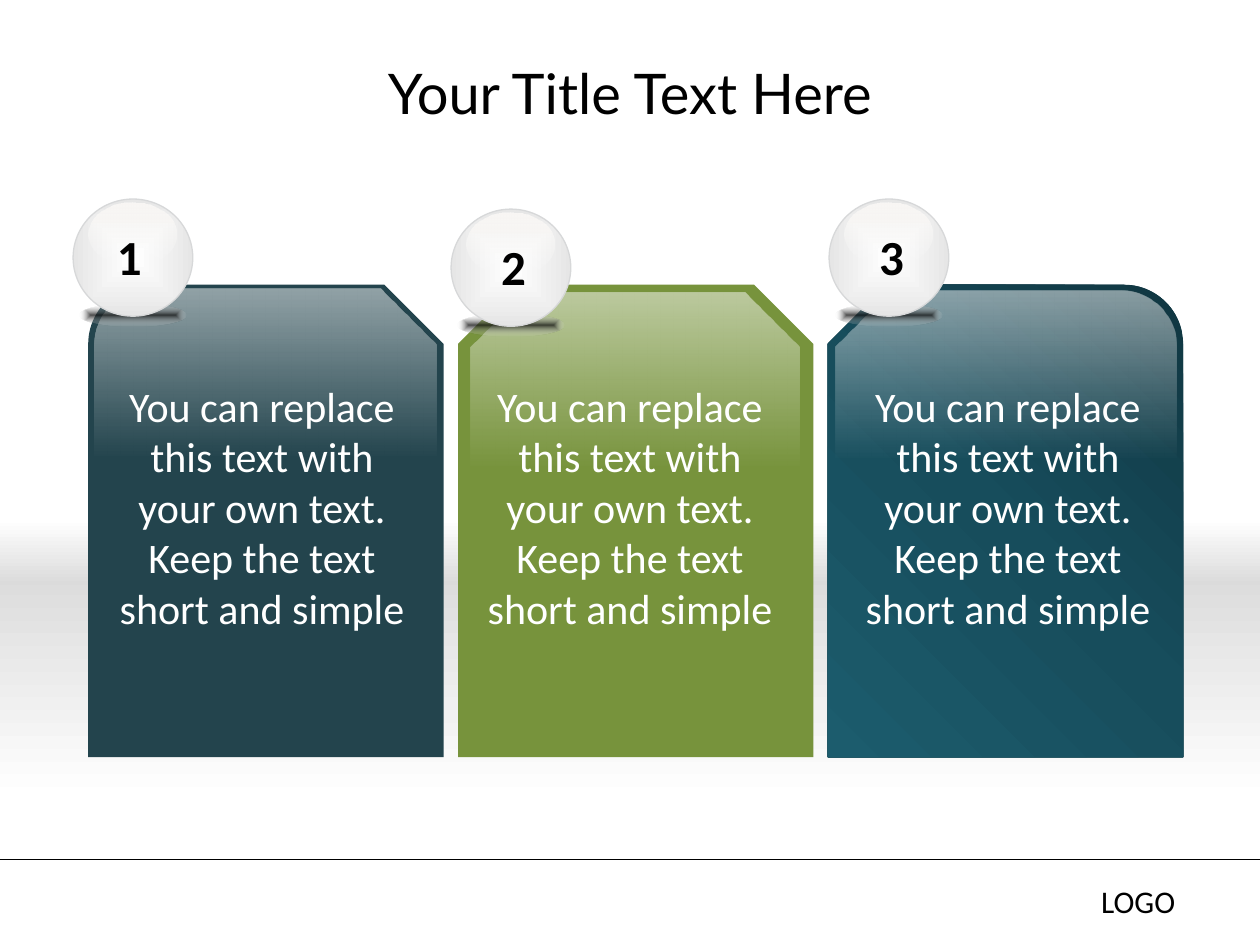
from lxml import etree
from pptx import Presentation, util as u
from pptx.dml.color import RGBColor
from pptx.enum import shapes, text
from pptx.oxml.ns import qn

WIDTH, HEIGHT = 10, 7.5
KIND = shapes.MSO_SHAPE
color = RGBColor.from_string

presentation = Presentation()
presentation.slide_width = u.Inches(WIDTH)
presentation.slide_height = u.Inches(HEIGHT)
slide = presentation.slides.add_slide(presentation.slide_layouts[6])


def add_shape(kind, box, stops, angle=None, flip=False, outline=None):
    """Stops are (position, colour, opacity) in percent; no angle means a radial fill."""
    shape = slide.shapes.add_shape(kind, *map(u.Inches, box))
    shape.shadow.inherit = False
    if outline:
        shape.line.color.rgb = color(outline)
        shape.line.width = u.Pt(0.75)
    else:
        shape.line.fill.background()
    properties = shape.element.spPr
    if flip:
        properties.find(qn("a:xfrm")).set("flipH", "1")
    if len(stops) == 1:
        shape.fill.solid()
        shape.fill.fore_color.rgb = color(stops[0][1])
        return
    shape.fill.gradient()
    gradient = properties.find(qn("a:gradFill"))
    for child in list(gradient):
        gradient.remove(child)
    stop_list = etree.SubElement(gradient, qn("a:gsLst"))
    for position, value, opacity in stops:
        stop = etree.SubElement(stop_list, qn("a:gs"), pos=str(position * 1000))
        tone = etree.SubElement(stop, qn("a:srgbClr"), val=value)
        if opacity < 100:
            etree.SubElement(tone, qn("a:alpha"), val=str(opacity * 1000))
    if angle is None:
        radial = etree.SubElement(gradient, qn("a:path"), path="shape")
        etree.SubElement(radial, qn("a:fillToRect"), l="50000", t="50000", r="50000", b="50000")
    else:
        etree.SubElement(gradient, qn("a:lin"), ang=str(angle * 60000), scaled="0")


def add_text(content, box, size, font="Calibri", fill="000000", bold=False,
             align=text.PP_ALIGN.LEFT, anchor=text.MSO_ANCHOR.TOP, wrap=True):
    frame = slide.shapes.add_textbox(*map(u.Inches, box)).text_frame
    frame.word_wrap = wrap
    frame.vertical_anchor = anchor
    paragraph = frame.paragraphs[0]
    paragraph.alignment = align
    run = paragraph.add_run()
    run.text = content
    run.font.name, run.font.size, run.font.bold = font, u.Pt(size), bold
    run.font.color.rgb = color(fill)


# Footer
rule_top = u.Inches(6.82)
rule = slide.shapes.add_connector(shapes.MSO_CONNECTOR.STRAIGHT, 0, rule_top, u.Inches(WIDTH), rule_top)
rule.line.color.rgb = color("000000")
rule.line.width = u.Pt(0.75)
etree.SubElement(rule.element.spPr, qn("a:effectLst"))
add_text("LOGO", (8.64, 6.95, 1.11, 0.4), 18)

# Grey floor behind the cards
add_shape(KIND.RECTANGLE, (0, 4.62, WIDTH, 1.73), [(0, "DDDDDD", 100), (100, "FFFFFF", 100)], 90)
add_shape(KIND.RECTANGLE, (0, 4.12, WIDTH, 0.52), [(0, "FFFFFF", 100), (100, "DBDBDB", 100)], 90)

# Cards: kind, fill, mirrored, gloss inset and size
teal = [(0, "103641", 100), (50, "174D5C", 100), (100, "1C5C6D", 100)]
gloss = [(0, "FFFFFF", 50), (50, "FFFFFF", 0)]
cards = [
    (KIND.SNIP_ROUND_RECTANGLE, [(0, "23444D", 100)], False, (0.05, 0.03, 2.71, 2.67)),
    (KIND.SNIP_2_SAME_RECTANGLE, [(0, "77933C", 100)], False, (0.1, 0.06, 2.61, 2.77)),
    (KIND.SNIP_ROUND_RECTANGLE, teal, True, (0.06, 0.05, 2.71, 2.67)),
]
card_left, card_top, card_step = 0.7, 2.26, 2.935
for column, (kind, fill, mirrored, (inset_x, inset_y, width, height)) in enumerate(cards):
    left = card_left + column * card_step
    add_shape(kind, (left, card_top, 2.82, 3.75), fill, 45, mirrored)
    add_shape(kind, (left + inset_x, card_top + inset_y, width, height), gloss, 90, mirrored)

# Numbered balls: top of the ball, inset of the number
ball_left, ball_step = 0.58, 3
for column, (top, inset) in enumerate([(1.58, 0.25), (1.66, 0.3), (1.58, 0.3)]):
    left = ball_left + column * ball_step
    add_shape(KIND.OVAL, (left + 0.05, top + 0.83, 0.85, 0.18), [(0, "171717", 76), (100, "FFFFFF", 0)])
    add_shape(KIND.OVAL, (left, top, 0.95, 0.93), [(0, "FFFFFF", 100), (100, "E6E6E6", 100)],
              outline="D7D8D9")
    add_shape(KIND.OVAL, (left + 0.12, top + 0.03, 0.7, 0.5), [(0, "FFFCF9", 77), (100, "FFFFFF", 0)], 90)
    add_text(str(column + 1), (left + inset, top + 0.17, 0.4, 0.57), 28, bold=True, wrap=False)

# Card texts
for left in (0.83, 3.75, 6.75):
    add_text("You can replace this text with your own text. Keep the text short and simple",
             (left, 2.97, 2.5, 2.12), 24, fill="FFFFFF", align=text.PP_ALIGN.CENTER)

# Title
add_text("Your Title Text Here", (0.5, 0.3, 9, 0.87), 32, font="Lato",
         align=text.PP_ALIGN.CENTER, anchor=text.MSO_ANCHOR.MIDDLE)

presentation.save("out.pptx")
